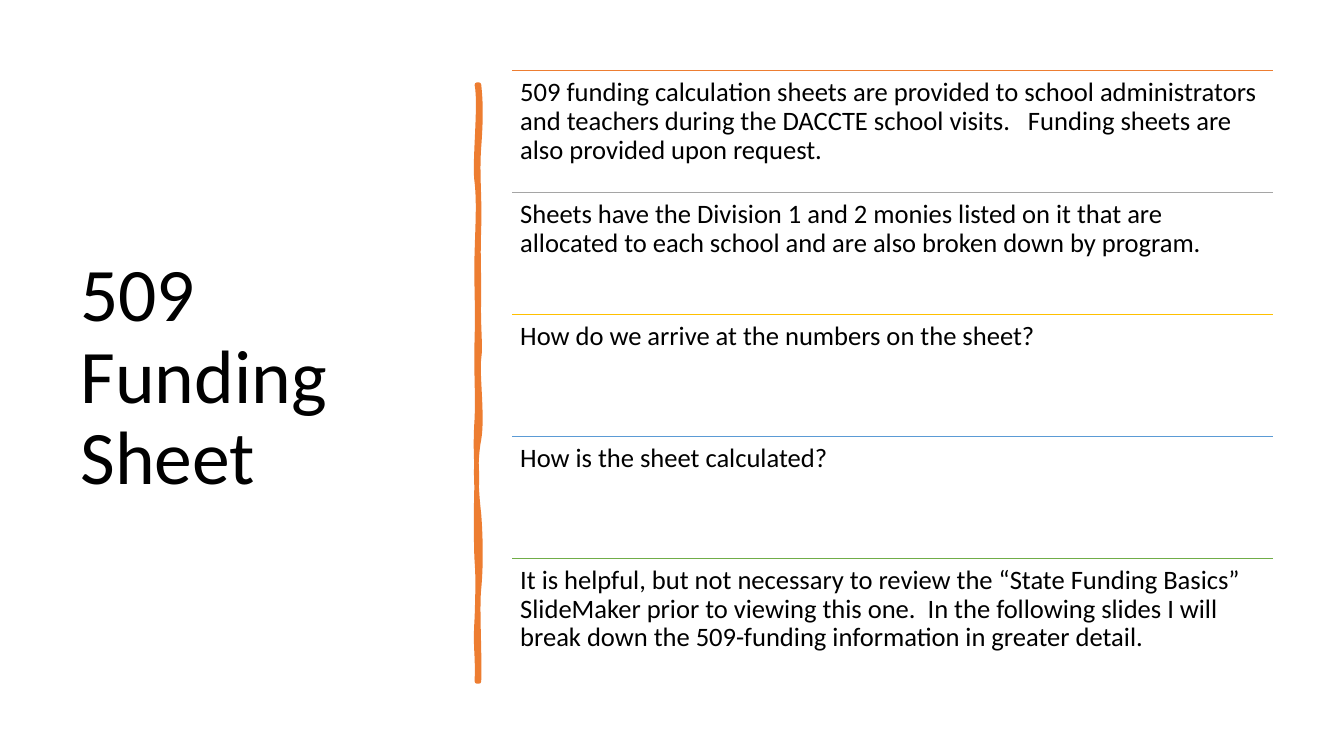
from lxml import etree
from pptx import Presentation
from pptx.dml.color import RGBColor
from pptx.enum.shapes import MSO_CONNECTOR
from pptx.enum.text import MSO_ANCHOR
from pptx.oxml.ns import qn
from pptx.util import Inches, Pt

BLACK = RGBColor(0x00, 0x00, 0x00)
ORANGE = RGBColor(0xED, 0x7D, 0x31)
GRAY = RGBColor(0xA5, 0xA5, 0xA5)
GOLD = RGBColor(0xFF, 0xC0, 0x00)
BLUE = RGBColor(0x5B, 0x9B, 0xD5)
GREEN = RGBColor(0x70, 0xAD, 0x47)

FONT = "Calibri"
LIST_LEFT, LIST_TOP = 5.08, 0.7
LIST_WIDTH, ROW_HEIGHT = 7.55, 1.21

ROWS = [
    (ORANGE, "509 funding calculation sheets are provided to school administrators "
             "and teachers during the DACCTE school visits.   Funding sheets are "
             "also provided upon request."),
    (GRAY, "Sheets have the Division 1 and 2 monies listed on it that are "
           "allocated to each school and are also broken down by program."),
    (GOLD, "How do we arrive at the numbers on the sheet?"),
    (BLUE, "How is the sheet calculated?"),
    (GREEN, "It is helpful, but not necessary to review the “State Funding Basics” "
            "SlideMaker prior to viewing this one.  In the following slides I will "
            "break down the 509-funding information in greater detail."),
]

BRUSH_START = (4.75, 0.84)
BRUSH_CURVES = [
    ((4.77, 1.02), (4.77, 1.19), (4.75, 1.46)),
    ((4.73, 1.73), (4.76, 1.95), (4.75, 2.26)),
    ((4.74, 2.57), (4.75, 2.62), (4.75, 2.94)),
    ((4.74, 3.25), (4.77, 3.42), (4.75, 3.56)),
    ((4.73, 3.7), (4.79, 4.14), (4.75, 4.36)),
    ((4.71, 4.57), (4.72, 4.84), (4.75, 5.1)),
    ((4.77, 5.36), (4.77, 5.64), (4.75, 5.84)),
    ((4.73, 6.03), (4.76, 6.5), (4.75, 6.76)),
    ((4.74, 6.76), (4.73, 6.76), (4.73, 6.76)),
    ((4.74, 6.46), (4.71, 6.44), (4.73, 6.13)),
    ((4.74, 5.83), (4.74, 5.7), (4.73, 5.57)),
    ((4.72, 5.44), (4.72, 4.95), (4.73, 4.77)),
    ((4.73, 4.59), (4.71, 4.45), (4.73, 4.15)),
    ((4.74, 3.86), (4.72, 3.73), (4.73, 3.35)),
    ((4.74, 2.98), (4.72, 2.81), (4.73, 2.5)),
    ((4.74, 2.18), (4.75, 2), (4.73, 1.81)),
    ((4.7, 1.63), (4.77, 1.04), (4.73, 0.84)),
]


def add_text(slide, text, left, top, width, height, size, inset=(0.1, 0.05),
             anchor=MSO_ANCHOR.TOP, color=BLACK):
    shape = slide.shapes.add_textbox(
        Inches(left), Inches(top), Inches(width), Inches(height))
    frame = shape.text_frame
    frame.word_wrap = True
    frame.vertical_anchor = anchor
    frame.margin_left = frame.margin_right = Inches(inset[0])
    frame.margin_top = frame.margin_bottom = Inches(inset[1])
    paragraph = frame.paragraphs[0]
    paragraph.line_spacing = 0.9
    run = paragraph.add_run()
    run.text = text
    run.font.name = FONT
    run.font.size = Pt(size)
    run.font.color.rgb = color


def add_rule(slide, top, color):
    line = slide.shapes.add_connector(
        MSO_CONNECTOR.STRAIGHT, Inches(LIST_LEFT), Inches(top),
        Inches(LIST_LEFT + LIST_WIDTH), Inches(top))
    line.line.color.rgb = color
    line.line.width = Pt(1)
    etree.SubElement(line._element.spPr, qn("a:effectLst"))


def bend_segments(shape, curves):
    segments = list(shape._element.iter(qn("a:lnTo")))
    for segment, curve in zip(segments, curves):
        segment.tag = qn("a:cubicBezTo")
        for point in list(segment):
            segment.remove(point)
        for x, y in curve:
            etree.SubElement(segment, qn("a:pt"), x=str(Inches(x) - shape.left),
                             y=str(Inches(y) - shape.top))


def add_brush_stroke(slide):
    corners = [(Inches(x), Inches(y)) for _, _, (x, y) in BRUSH_CURVES]
    builder = slide.shapes.build_freeform(*(Inches(value) for value in BRUSH_START))
    builder.add_line_segments(corners, close=True)
    shape = builder.convert_to_shape()
    bend_segments(shape, BRUSH_CURVES)
    shape.shadow.inherit = False
    shape.fill.solid()
    shape.fill.fore_color.rgb = ORANGE
    shape.line.color.rgb = ORANGE
    shape.line.width = Pt(3.25)
    etree.SubElement(shape.line._get_or_add_ln(), qn("a:round"))


def main():
    presentation = Presentation()
    presentation.slide_width = Inches(13.33)
    presentation.slide_height = Inches(7.5)
    slide = presentation.slides.add_slide(presentation.slide_layouts[6])

    add_text(slide, "509 Funding Sheet", 0.7, 0.7, 3.74, 6.11, size=54,
             anchor=MSO_ANCHOR.MIDDLE)
    add_brush_stroke(slide)
    for index, (color, text) in enumerate(ROWS):
        top = LIST_TOP + index * ROW_HEIGHT
        add_rule(slide, top, color)
        add_text(slide, text, LIST_LEFT, top, LIST_WIDTH, ROW_HEIGHT, size=19,
                 inset=(0.08, 0.08))

    presentation.save("out.pptx")


if __name__ == "__main__":
    main()
